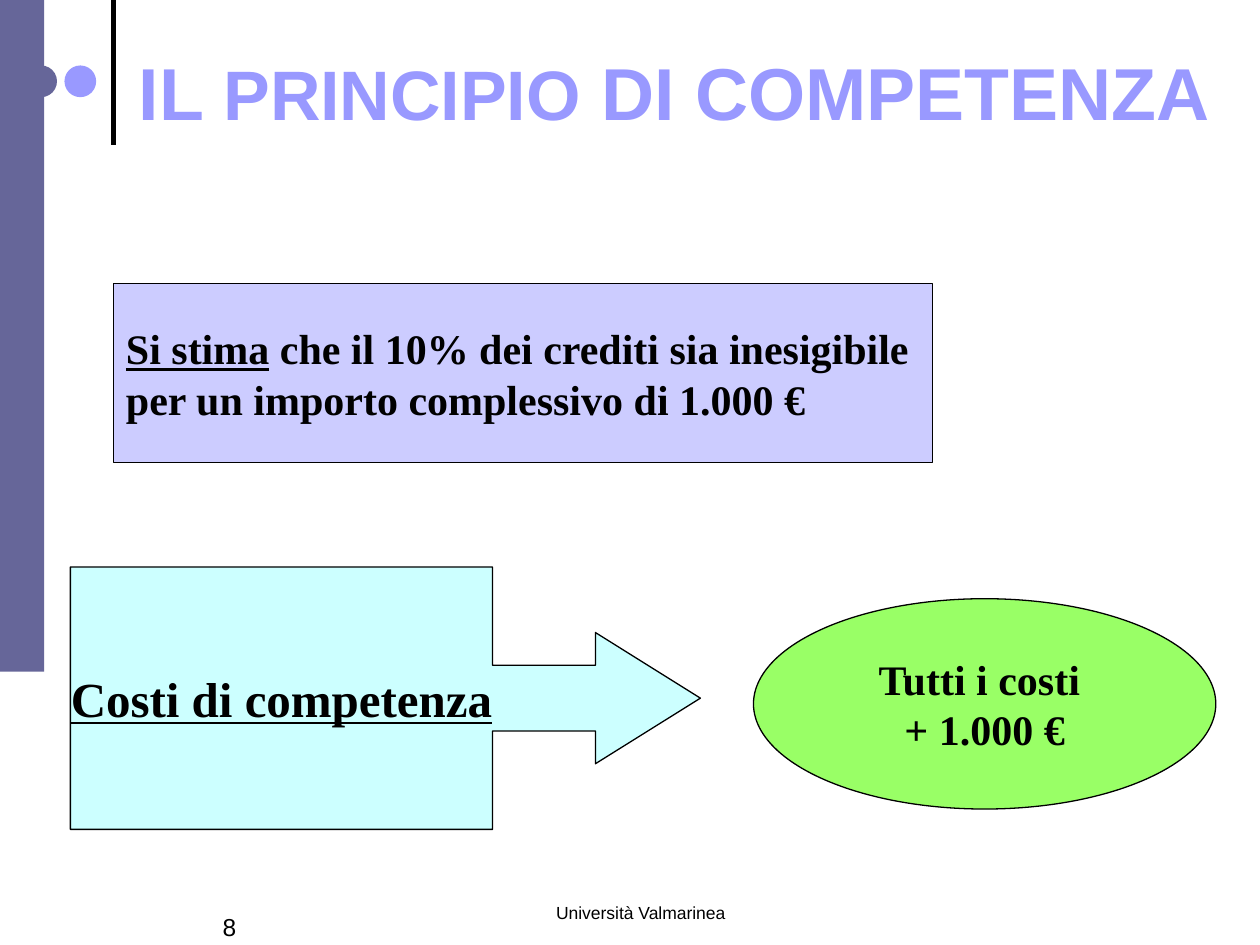
from lxml.etree import SubElement
from pptx import Presentation
from pptx.dml.color import RGBColor
from pptx.enum.shapes import MSO_CONNECTOR, MSO_SHAPE
from pptx.enum.text import MSO_ANCHOR, PP_ALIGN
from pptx.oxml.ns import qn
from pptx.util import Cm, Pt

BLACK = RGBColor(0x00, 0x00, 0x00)
SLATE = RGBColor(0x66, 0x66, 0x99)
LILAC = RGBColor(0x99, 0x99, 0xFF)
LAVENDER = RGBColor(0xCC, 0xCC, 0xFF)
AQUA = RGBColor(0xCC, 0xFF, 0xFF)
LIME = RGBColor(0x99, 0xFF, 0x66)
SANS, SERIF = "Arial", "Times New Roman"


def write(frame, lines, font, color=BLACK, bold=False, align=PP_ALIGN.LEFT):
    for index, line in enumerate(lines):
        paragraph = frame.paragraphs[0] if index == 0 else frame.add_paragraph()
        paragraph.alignment = align
        for text, size, underline in line:
            run = paragraph.add_run()
            run.text = text
            run.font.name = font
            run.font.size = Pt(size)
            run.font.bold = bold
            run.font.underline = underline
            run.font.color.rgb = color


def add_figure(slide, kind, box, fill, outlined=False):
    figure = slide.shapes.add_shape(kind, *map(Cm, box))
    figure.shadow.inherit = False
    figure.fill.solid()
    figure.fill.fore_color.rgb = fill
    if outlined:
        figure.line.color.rgb = BLACK
        figure.line.width = Pt(0.75)
    else:
        figure.line.fill.background()
    return figure


def add_panel(slide, kind, box, fill, lines, align=PP_ALIGN.CENTER):
    panel = add_figure(slide, kind, box, fill, outlined=True)
    frame = panel.text_frame
    frame.word_wrap = False
    frame.vertical_anchor = MSO_ANCHOR.MIDDLE
    write(frame, lines, SERIF, bold=True, align=align)
    return panel


def add_label(slide, box, line, **style):
    label = slide.shapes.add_textbox(*map(Cm, box))
    label.text_frame.word_wrap = True
    write(label.text_frame, [line], SANS, **style)
    return label


def add_side_decoration(slide, box):
    left, top, width, height = box
    rule_x = Cm(left + 2.29)
    rule = slide.shapes.add_connector(
        MSO_CONNECTOR.STRAIGHT, rule_x, Cm(top + 2.92), rule_x, Cm(top))
    rule.line.color.rgb = BLACK
    rule.line.width = Pt(3)
    SubElement(rule.element.spPr, qn("a:effectLst"))
    for index, color in enumerate((SLATE, LILAC)):
        dot = (left + 0.51 + index * 0.79, top + 1.32, 0.64, 0.64)
        add_figure(slide, MSO_SHAPE.OVAL, dot, color)
    add_figure(slide, MSO_SHAPE.RECTANGLE, (left, top, width, height), SLATE)


def add_title(slide, box):
    title = add_label(
        slide, box,
        [("IL ", 42, False), ("PRINCIPIO", 40, False), (" DI COMPETENZA", 42, False)],
        color=LILAC, bold=True, align=PP_ALIGN.CENTER)
    title.text_frame.vertical_anchor = MSO_ANCHOR.MIDDLE
    title.text_frame.margin_bottom = Cm(1.76)


def add_footer(slide, box):
    left, top, width, height = box
    add_label(slide, (left + 4.65, top, width - 4.65, height),
              [("Università Valmarinea", 10, False)], align=PP_ALIGN.CENTER)
    add_label(slide, (left, top + 0.2, 3.61, height - 0.2), [("8", 14, False)])


def add_estimate(slide, box):
    add_panel(slide, MSO_SHAPE.RECTANGLE, box, LAVENDER, [
        [("Si stima", 24, True), (" che il 10% dei crediti sia inesigibile", 24, False)],
        [("per un importo complessivo di 1.000 €", 24, False)],
    ], PP_ALIGN.LEFT)


def add_cost_flow(slide, box):
    left, top, width, height = box
    costs = add_panel(slide, MSO_SHAPE.RIGHT_ARROW_CALLOUT,
                      (left, top, 12.7, height), AQUA,
                      [[("Costi di competenza", 28, True)]])
    for index, ratio in enumerate((0.25, 0.25, 0.4, 0.67)):
        costs.adjustments[index] = ratio
    total_width = 9.32
    add_panel(slide, MSO_SHAPE.OVAL,
              (left + width - total_width, top + 0.64, total_width, 4.24), LIME,
              [[("Tutti i costi ", 24, False)], [("+ 1.000 €", 24, False)]])


def main():
    deck = Presentation()
    deck.slide_width, deck.slide_height = Cm(25.4), Cm(19.05)
    slide = deck.slides.add_slide(deck.slide_layouts[6])
    add_side_decoration(slide, (0, 0, 0.89, 13.54))
    add_footer(slide, (4.24, 18.06, 12.7, 0.99))
    add_title(slide, (2.29, 0.53, 22.61, 4.24))
    add_estimate(slide, (2.29, 5.72, 16.51, 3.61))
    add_cost_flow(slide, (1.42, 11.43, 23.09, 5.29))
    deck.save("out.pptx")


if __name__ == "__main__":
    main()
